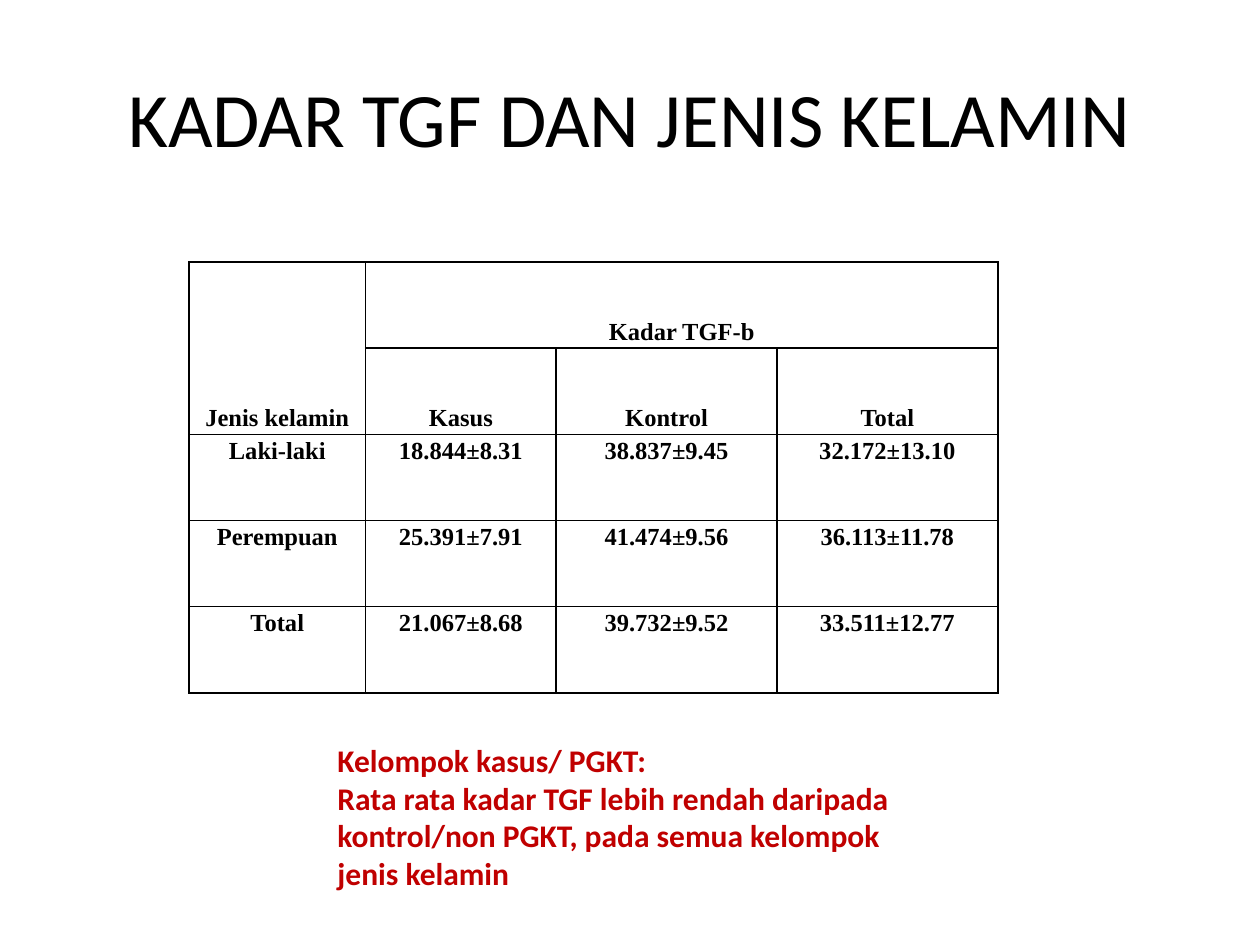
from lxml import etree
from pptx import Presentation
from pptx.dml.color import RGBColor
from pptx.enum.text import MSO_ANCHOR, PP_ALIGN
from pptx.oxml.ns import qn
from pptx.util import Inches, Pt

BLACK = RGBColor(0x00, 0x00, 0x00)
WHITE = RGBColor(0xFF, 0xFF, 0xFF)
RED = RGBColor(0xC0, 0x00, 0x00)
LEFT, CENTER = PP_ALIGN.LEFT, PP_ALIGN.CENTER
TOP, MIDDLE, BOTTOM = MSO_ANCHOR.TOP, MSO_ANCHOR.MIDDLE, MSO_ANCHOR.BOTTOM

BLANK_LAYOUT = 6
HEADER_ROWS = 2
COLUMN_WIDTHS = (1.4, 1.51, 1.75, 1.75)
ROWS = (
    ("Jenis kelamin", "Kadar TGF-b", "", ""),
    ("", "Kasus", "Kontrol", "Total"),
    ("Laki-laki", "18.844±8.31", "38.837±9.45", "32.172±13.10"),
    ("Perempuan", "25.391±7.91", "41.474±9.56", "36.113±11.78"),
    ("Total", "21.067±8.68", "39.732±9.52", "33.511±12.77"),
)


def format_text(frame, font, size, color, bold, align):
    for para in frame.paragraphs:
        para.alignment = align
        for span in para.runs:
            span.font.name = font
            span.font.size = Pt(size)
            span.font.bold = bold
            span.font.color.rgb = color


def add_text(page, box, text, size, color, bold=False, align=LEFT, anchor=TOP):
    frame = page.shapes.add_textbox(*map(Inches, box)).text_frame
    frame.word_wrap = True
    frame.vertical_anchor = anchor
    frame.text = text
    format_text(frame, "Calibri", size, color, bold, align)


def add_borders(cell):
    """Draw a thin black line on each side, placed before the cell fill."""
    properties = cell._tc.get_or_add_tcPr()
    for position, side in enumerate(("a:lnL", "a:lnR", "a:lnT", "a:lnB")):
        line = etree.Element(qn(side), w=str(Pt(1)))
        fill = etree.SubElement(line, qn("a:solidFill"))
        etree.SubElement(fill, qn("a:srgbClr"), val=str(BLACK))
        properties.insert(position, line)


def style_cell(cell, text, anchor):
    cell.fill.solid()
    cell.fill.fore_color.rgb = WHITE
    add_borders(cell)
    cell.margin_left = cell.margin_right = Inches(0.02)
    cell.margin_top = cell.margin_bottom = Inches(0.02)
    cell.vertical_anchor = anchor
    cell.text = text
    cell.text_frame.paragraphs[0].line_spacing = Pt(16)
    format_text(cell.text_frame, "Times New Roman", 14, BLACK, True, CENTER)


def add_level_table(page, box):
    left, top, width, height = map(Inches, box)
    table = page.shapes.add_table(
        len(ROWS), len(COLUMN_WIDTHS), left, top, width, height).table
    for column, share in zip(table.columns, COLUMN_WIDTHS):
        column.width = int(width * share / sum(COLUMN_WIDTHS))
    for row_index, texts in enumerate(ROWS):
        anchor = BOTTOM if row_index < HEADER_ROWS else TOP
        for column_index, text in enumerate(texts):
            style_cell(table.cell(row_index, column_index), text, anchor)
    # Header cells that span rows or columns
    table.cell(0, 0).merge(table.cell(1, 0))
    table.cell(0, 1).merge(table.cell(0, 3))


def main():
    deck = Presentation()
    deck.slide_width, deck.slide_height = Inches(10), Inches(7.5)
    page = deck.slides.add_slide(deck.slide_layouts[BLANK_LAYOUT])

    # Title
    add_text(page, (0.5, 0.3, 9, 1.25), "KADAR TGF DAN JENIS KELAMIN",
             44, BLACK, align=CENTER, anchor=MIDDLE)
    # Levels by sex and group
    add_level_table(page, (1.5, 2.08, 6.42, 3.42))
    # Conclusion
    add_text(page, (2.58, 5.83, 5, 1.31),
             "Kelompok kasus/ PGKT:\n"
             "Rata rata kadar TGF lebih rendah daripada kontrol/non PGKT, "
             "pada semua kelompok jenis kelamin", 18, RED, bold=True)

    deck.save("out.pptx")


if __name__ == "__main__":
    main()
